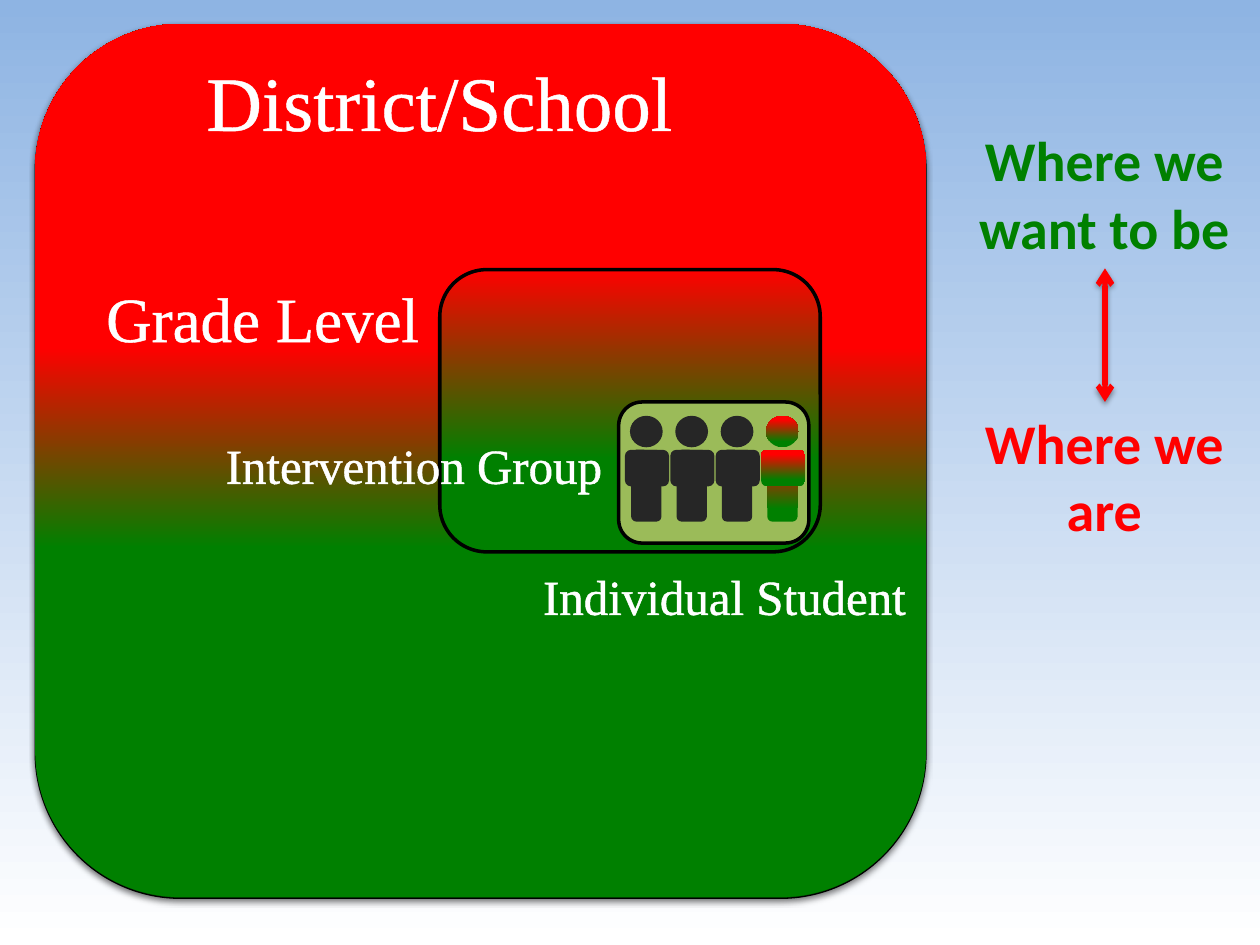
import pptx
import pptx.util
import pptx.dml.color
import pptx.enum.shapes
import pptx.enum.text
import pptx.oxml
import pptx.oxml.ns

Inches = pptx.util.Inches
Pt = pptx.util.Pt
Color = pptx.dml.color.RGBColor.from_string
Shapes = pptx.enum.shapes.MSO_SHAPE
Anchor = pptx.enum.text.MSO_ANCHOR
namespace = pptx.oxml.ns.nsdecls("a")

colors = {
    "white": "FFFFFF", "sky": "8EB4E3", "green": "008000", "red": "FF0000",
    "black": "000000", "olive": "9BBB59", "charcoal": "262626",
}


def paint(fill, stops):
    if len(stops) == 1:
        fill.solid()
        fill.fore_color.rgb = Color(colors[stops[0][1]])
        return
    fill.gradient()
    fill.gradient_angle = 90
    for stop, (position, name) in zip(fill.gradient_stops, stops):
        stop.position = position
        stop.color.rgb = Color(colors[name])


def add_block(parent, kind, place, stops, line_width=0):
    block = parent.shapes.add_shape(kind, *map(Inches, place))
    block.shadow.inherit = False
    paint(block.fill, stops)
    if line_width:
        block.line.color.rgb = Color(colors["black"])
        block.line.width = Pt(line_width)
    else:
        block.line.fill.background()
    return block


deck = pptx.Presentation()
deck.slide_width = Inches(10)
deck.slide_height = Inches(7.5)
page = deck.slides.add_slide(deck.slide_layouts[5])
paint(page.background.fill, [(0, "white"), (1, "sky")])

rounded = Shapes.ROUNDED_RECTANGLE
district_base = add_block(page, rounded, (0.28, 0.2, 7.07, 6.93), [(0, "green")], 0.75)
district = add_block(page, rounded, (0.28, 0.19, 7.07, 6.93), [(0.4, "green"), (0.63, "red")])
add_block(page, rounded, (3.49, 2.14, 3.02, 2.24), [(0.33, "green"), (1, "red")], 2)
add_block(page, rounded, (4.91, 3.19, 1.51, 1.12), [(0, "olive")], 2)

student_fills = [[(0, "charcoal")]] * 3 + [[(0.18, "green"), (0.87, "red")]]
for index, stops in enumerate(student_fills):
    left = 4.96 + 0.36 * index
    student = page.shapes.add_group_shape()
    add_block(student, rounded, (left + 0.05, 3.57, 0.24, 0.57), stops)
    add_block(student, rounded, (left, 3.57, 0.35, 0.29), stops)
    add_block(student, Shapes.OVAL, (left + 0.04, 3.3, 0.26, 0.25), stops)

arrow = page.shapes.add_connector(
    pptx.enum.shapes.MSO_CONNECTOR.STRAIGHT,
    Inches(8.77), Inches(2.13), Inches(8.77), Inches(3.19),
)
arrow.line.color.rgb = Color(colors["red"])
arrow.line.width = Pt(3)
for end in ("headEnd", "tailEnd"):
    arrow.line._get_or_add_ln().append(
        pptx.oxml.parse_xml(f'<a:{end} {namespace} type="arrow"/>')
    )

for shape, alpha, distance in ((district_base, 35, 1.8), (district, 35, 1.8), (arrow, 38, 1.6)):
    properties = shape._element.spPr
    for effects in properties.findall(pptx.oxml.ns.qn("a:effectLst")):
        properties.remove(effects)
    properties.append(pptx.oxml.parse_xml(
        f'<a:effectLst {namespace}><a:outerShdw blurRad="{Pt(3.1)}" dist="{Pt(distance)}" '
        f'dir="5400000" rotWithShape="0"><a:srgbClr val="{colors["black"]}">'
        f'<a:alpha val="{alpha * 1000}"/></a:srgbClr></a:outerShdw></a:effectLst>'
    ))

labels = [
    ("District/School", (1.4, 0.21, 4.18, 1.17), 44, "white"),
    ("Grade Level", (0.62, 1.93, 2.93, 1.17), 36, "white"),
    ("Intervention Group", (1.21, 3.1, 4.15, 1.17), 28, "white"),
    ("Individual Student", (4.15, 4.14, 3.2, 1.17), 28, "white"),
    ("Where we want to be", (7.53, 0.95, 2.47, 1.18), 32, "green"),
    ("Where we are", (7.53, 3.19, 2.47, 1.18), 32, "red"),
]
for index, (text, place, size, color) in enumerate(labels):
    if index == 0:
        box = page.shapes.title
        box.left, box.top, box.width, box.height = map(Inches, place)
        page.shapes._spTree.append(box._element)
    else:
        box = page.shapes.add_textbox(*map(Inches, place))
    frame = box.text_frame
    frame.text = text
    frame.word_wrap = True
    para = frame.paragraphs[0]
    para.alignment = pptx.enum.text.PP_ALIGN.CENTER
    para.font.size = Pt(size)
    para.font.color.rgb = Color(colors[color])
    if color == "white":
        frame.auto_size = pptx.enum.text.MSO_AUTO_SIZE.NONE
        frame.vertical_anchor = Anchor.MIDDLE
        para.font.name = "Times New Roman"
        para.font._element.insert(0, pptx.oxml.parse_xml(
            f'<a:ln {namespace} w="{Pt(1.45)}"><a:solidFill>'
            f'<a:srgbClr val="{colors["white"]}"/></a:solidFill></a:ln>'
        ))
    else:
        frame.auto_size = pptx.enum.text.MSO_AUTO_SIZE.SHAPE_TO_FIT_TEXT
        frame.vertical_anchor = Anchor.TOP
        para.font.name = "Calibri"
        para.font.bold = True

deck.save("out.pptx")
